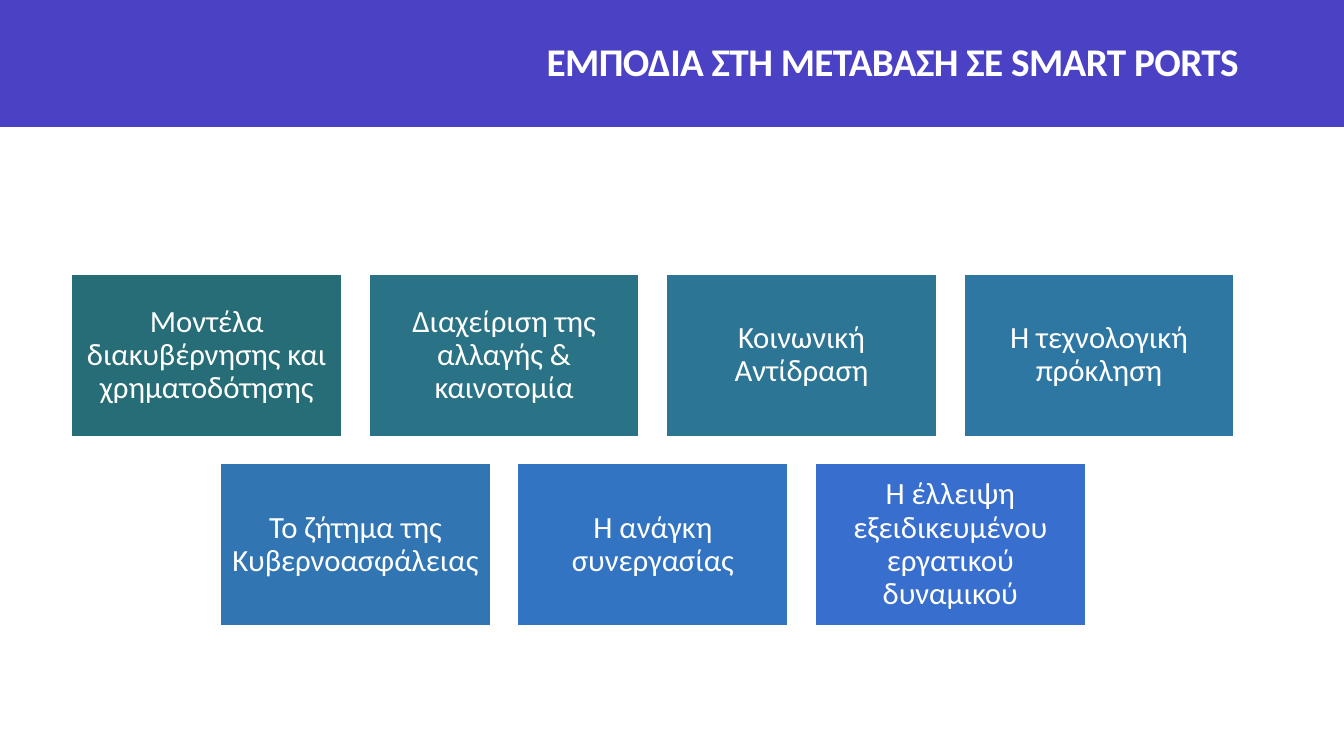
from dataclasses import dataclass
from pptx import Presentation, util as u
from pptx.dml.color import RGBColor
from pptx.enum import shapes, text

TITLE = "ΕΜΠΟΔΙΑ ΣΤΗ ΜΕΤΑΒΑΣΗ ΣΕ SMART PORTS"
ROWS = [
    [("Μοντέλα διακυβέρνησης και χρηματοδότησης", "276D77"),
     ("Διαχείριση της αλλαγής & καινοτομία", "2A7285"),
     ("Κοινωνική Αντίδραση", "2C7594"),
     ("Η τεχνολογική πρόκληση", "2F77A3")],
    [("Το ζήτημα της Κυβερνοασφάλειας", "3176B3"),
     ("Η ανάγκη συνεργασίας", "3273C2"),
     ("Η έλλειψη εξειδικευμένου εργατικού δυναμικού", "386ECE")],
]


@dataclass(frozen=True)
class Theme:
    font: str = "Calibri"
    white: str = "FFFFFF"
    band: str = "4A41C5"
    head: int = 28
    body: int = 22


LOOK = Theme()
WIDE, HIGH = 13.33, 7.5
BAND = 1.26
CARD_W, CARD_H = 2.68, 1.61
STEP_X, STEP_Y = 2.95, 1.88
MID, TOP = 6.475, 2.72


def write(shape, words, size, align, pad=0.1, bold=False, track=0):
    frame = shape.text_frame
    frame.word_wrap = True
    frame.vertical_anchor = text.MSO_ANCHOR.MIDDLE
    frame.margin_left = frame.margin_right = u.Inches(pad)
    frame.margin_top = frame.margin_bottom = u.Inches(min(pad, 0.09))
    para = frame.paragraphs[0]
    para.alignment = align
    para.line_spacing = 0.9
    run = para.add_run()
    run.text = words
    font = run.font
    font.name, font.size, font.bold = LOOK.font, u.Pt(size), bold
    font.color.rgb = RGBColor.from_string(LOOK.white)
    if track:
        run._r.get_or_add_rPr().set("spc", str(round(track * 100)))


def block(slide, left, top, width, height, fill, line=None):
    shape = slide.shapes.add_shape(
        shapes.MSO_SHAPE.RECTANGLE, *map(u.Inches, (left, top, width, height)))
    shape.shadow.inherit = False
    shape.fill.solid()
    shape.fill.fore_color.rgb = RGBColor.from_string(fill)
    if line:
        shape.line.color.rgb = RGBColor.from_string(line)
        shape.line.width = u.Pt(1)
    else:
        shape.line.fill.background()
    return shape


def main():
    deck = Presentation()
    deck.slide_width, deck.slide_height = u.Inches(WIDE), u.Inches(HIGH)
    slide = deck.slides.add_slide(deck.slide_layouts[6])

    block(slide, 0, 0, WIDE, BAND, LOOK.band)
    title = slide.shapes.add_textbox(*map(u.Inches, (1.08, 0.21, 11.3, 0.85)))
    write(title, TITLE, LOOK.head, text.PP_ALIGN.RIGHT, bold=True, track=-0.4)

    for row, cards in enumerate(ROWS):
        start = MID - ((len(cards) - 1) * STEP_X + CARD_W) / 2
        for col, (words, fill) in enumerate(cards):
            card = block(slide, start + col * STEP_X, TOP + row * STEP_Y,
                         CARD_W, CARD_H, fill, LOOK.white)
            write(card, words, LOOK.body, text.PP_ALIGN.CENTER, pad=0.09)

    deck.save("out.pptx")


if __name__ == "__main__":
    main()
